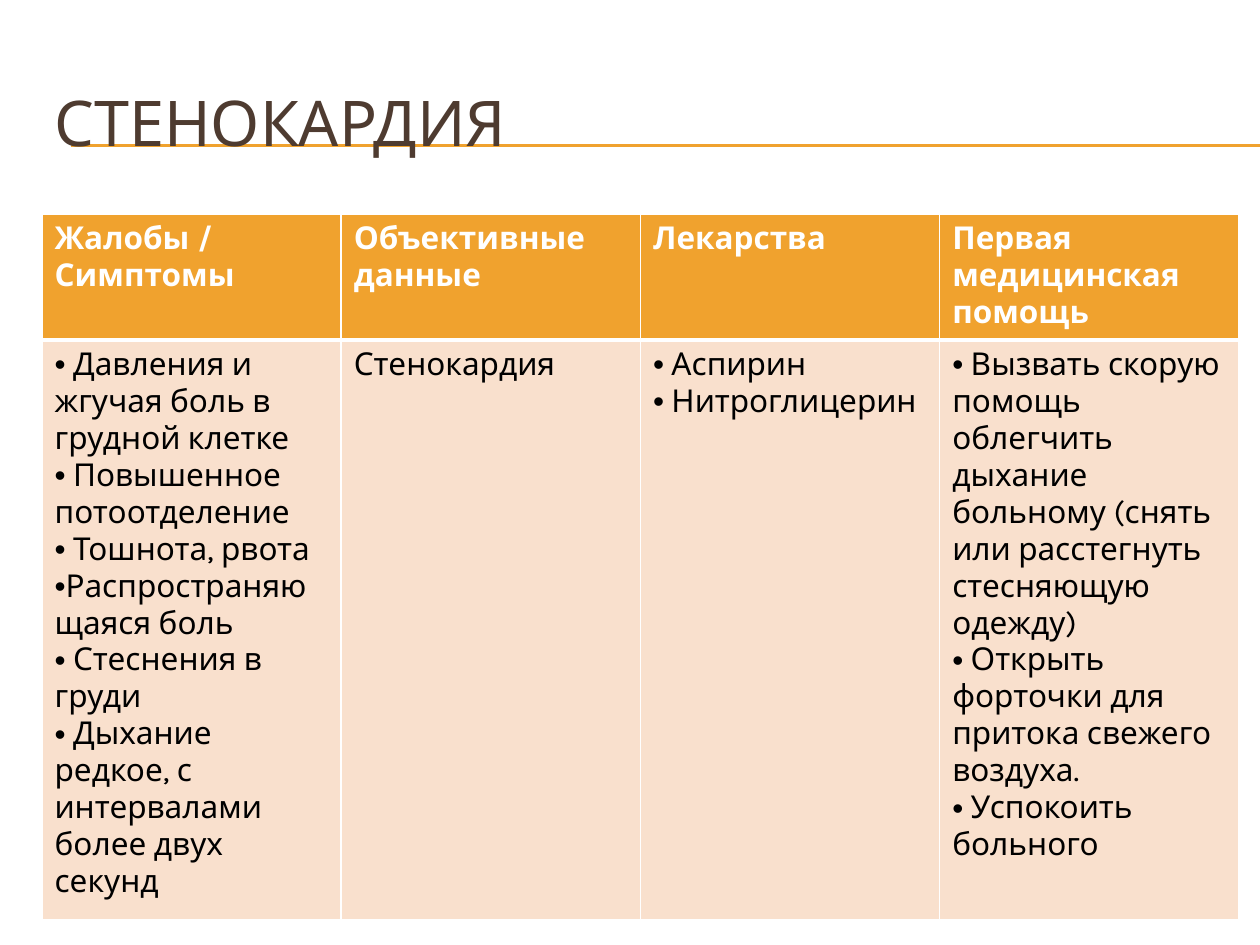
import pptx
import pptx.dml.color
import pptx.enum.shapes
import pptx.enum.text
import pptx.oxml
import pptx.oxml.ns
import pptx.util

RGBColor = pptx.dml.color.RGBColor
AMBER = RGBColor(0xF0, 0xA2, 0x2E)
PEACH = RGBColor(0xF9, 0xE0, 0xCD)
BROWN = RGBColor(0x4E, 0x3B, 0x30)
WHITE = RGBColor(0xFF, 0xFF, 0xFF)
BLACK = RGBColor(0x00, 0x00, 0x00)
FONT = "Karla"
BULLET = "•"

COLUMNS = [
    ("Жалобы / Симптомы", [
        "• Давления и жгучая\u00a0боль в грудной клетке".replace("\u00a0", " "),
        "• Повышенное потоотделение",
        "• Тошнота, рвота",
        "•Распространяющаяся боль",
        "• Стеснения в груди",
        "• Дыхание редкое, с интервалами более двух секунд",
    ]),
    ("Объективные данные", ["Стенокардия"]),
    ("Лекарства", ["• Аспирин", "• Нитроглицерин"]),
    ("Первая медицинская помощь", [
        "• Вызвать скорую помощь",
        "облегчить дыхание больному (снять или расстегнуть стесняющую одежду)",
        "• Открыть форточки для притока свежего воздуха.",
        "• Успокоить больного",
    ]),
]


def px(count):
    """Turn pixels at 126 to the inch into EMU."""
    return pptx.util.Emu(round(count * 914400 / 126))


def add_xml(parent, tag, **attributes):
    """Append a DrawingML element with its attributes and return it."""
    element = pptx.oxml.parse_xml(f"<a:{tag} {pptx.oxml.ns.nsdecls('a')}/>")
    for name, value in attributes.items():
        element.set(name, str(value))
    parent.append(element)
    return element


def write_text(frame, lines, size=18, color=BLACK, bold=False):
    """Write one paragraph per line, turning a leading bullet into a real one."""
    frame.word_wrap = True
    for index, line in enumerate(lines):
        para = frame.paragraphs[0] if index == 0 else frame.add_paragraph()
        if line.startswith(BULLET):
            properties = para._p.get_or_add_pPr()
            add_xml(properties, "buFont", typeface="Arial")
            add_xml(properties, "buChar", char=BULLET)
        span = para.add_run()
        span.text = line.removeprefix(BULLET)
        span.font.name = FONT
        span.font.size = pptx.util.Pt(size)
        span.font.bold = bold
        span.font.color.rgb = color


def add_rule(page, y):
    """Draw a thin amber line from the left margin to the right edge."""
    line = page.shapes.add_connector(
        pptx.enum.shapes.MSO_CONNECTOR.STRAIGHT, px(71), px(y), px(1260), px(y))
    line.line.color.rgb = AMBER
    line.line.width = pptx.util.Pt(0.75)
    add_xml(line._element.spPr, "effectLst")


def add_title(page, text):
    """Add the slide title."""
    box = page.shapes.add_textbox(px(42), px(63), px(1197), px(116))
    box.text_frame.vertical_anchor = pptx.enum.text.MSO_ANCHOR.MIDDLE
    write_text(box.text_frame, [text], size=36, color=BROWN)


def style_cell(cell, fill, **borders):
    """Give a cell white borders of the named widths in points and a fill."""
    properties = cell._tc.get_or_add_tcPr()
    for side, width in borders.items():
        line = add_xml(properties, f"ln{side}", w=pptx.util.Pt(width))
        add_xml(add_xml(line, "solidFill"), "srgbClr", val=WHITE)
    cell.fill.solid()
    cell.fill.fore_color.rgb = fill


def add_symptom_table(page):
    """Add the table with one column per topic."""
    shape = page.shapes.add_table(
        2, len(COLUMNS), px(42), px(214), px(1197), px(592))
    table = shape.table
    for row in table.rows:
        row.height = px(52)
    shape.height = px(592)
    for index, (heading, lines) in enumerate(COLUMNS):
        head, body = table.cell(0, index), table.cell(1, index)
        style_cell(head, AMBER, L=1, R=1, T=1, B=3)
        style_cell(body, PEACH, L=1, R=1, T=3, B=1)
        write_text(head.text_frame, [heading], color=WHITE, bold=True)
        write_text(body.text_frame, lines)


def main():
    """Build the slide and save it."""
    deck = pptx.Presentation()
    deck.slide_width, deck.slide_height = px(1260), px(945)
    page = deck.slides.add_slide(deck.slide_layouts[6])
    for y in (145, 146):
        add_rule(page, y)
    add_title(page, "СТЕНОКАРДИЯ")
    add_symptom_table(page)
    deck.save("out.pptx")


if __name__ == "__main__":
    main()
